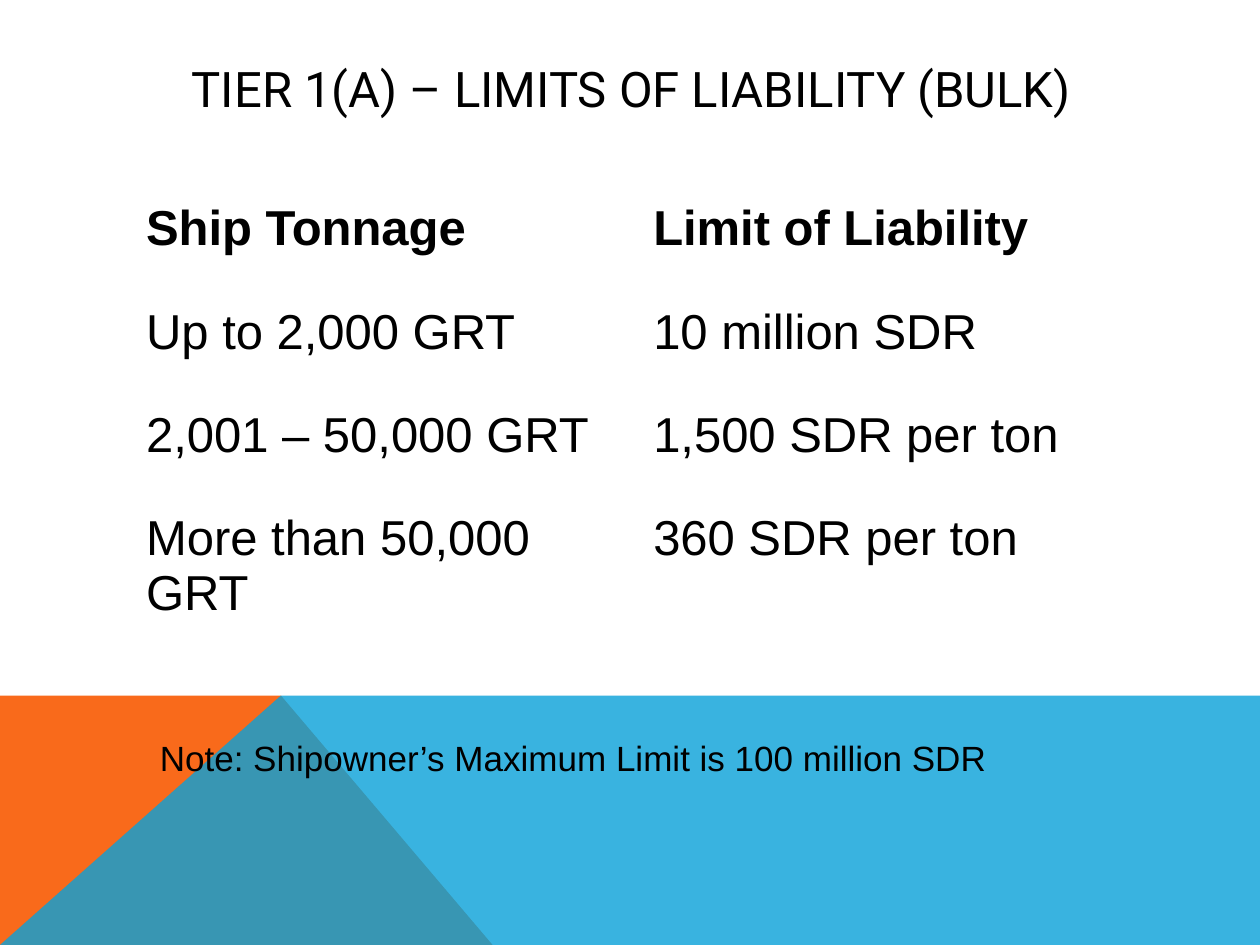
from dataclasses import dataclass

from lxml.etree import SubElement
from pptx import Presentation
from pptx.dml.color import RGBColor as Color
from pptx.enum.text import MSO_ANCHOR as Anchor, PP_ALIGN as Align
from pptx.oxml.ns import qn
from pptx.util import Inches, Pt


@dataclass(frozen=True)
class Theme:
    ink: Color = Color(0, 0, 0)
    orange: Color = Color(0xF9, 0x6A, 0x1B)
    blue: Color = Color(0x08, 0xA1, 0xD9)
    blue_opacity: int = 80
    title_font: str = "Roboto"
    body_font: str = "Arial"
    large: int = 28
    small: int = 20


THEME = Theme()
WIDTH, HEIGHT = 10, 7.5
BAND_TOP = 5.52
PEAK = 2.23

TONNAGE_LIMITS = [
    ("Ship Tonnage", "Limit of Liability"),
    ("Up to 2,000 GRT", "10 million SDR"),
    ("2,001 – 50,000 GRT", "1,500 SDR per ton"),
    ("More than 50,000 GRT", "360 SDR per ton"),
]


def add_span(para, text, size, font, bold=False):
    span = para.add_run()
    span.text = text
    span.font.size = Pt(size)
    span.font.name = font
    span.font.bold = bold
    span.font.color.rgb = THEME.ink


def add_polygon(page, points, color, opacity=100):
    start, *rest = [(Inches(x), Inches(y)) for x, y in points]
    builder = page.shapes.build_freeform(*start)
    builder.add_line_segments(rest, close=True)
    shape = builder.convert_to_shape()
    shape.shadow.inherit = False
    shape.line.fill.background()
    shape.fill.solid()
    shape.fill.fore_color.rgb = color
    if opacity < 100:
        rgb = shape.fill._xPr.find(f".//{qn('a:srgbClr')}")
        SubElement(rgb, qn("a:alpha")).set("val", str(opacity * 1000))


def add_label(page, place, text, size, font, align=Align.LEFT, anchor=Anchor.TOP):
    box = page.shapes.add_textbox(*map(Inches, place))
    frame = box.text_frame
    frame.word_wrap = True
    frame.vertical_anchor = anchor
    para = frame.paragraphs[0]
    para.alignment = align
    add_span(para, text, size, font)


def add_limits_table(page, place, rows, row_heights):
    frame = page.shapes.add_table(len(rows), len(rows[0]), *map(Inches, place))
    table = frame.table
    table.first_row = table.horz_banding = False
    for row, height in zip(table.rows, row_heights):
        row.height = Inches(height)
    for r, texts in enumerate(rows):
        for c, text in enumerate(texts):
            cell = table.cell(r, c)
            cell.fill.background()
            add_span(cell.text_frame.paragraphs[0], text,
                     THEME.large, THEME.body_font, bold=r == 0)


def main():
    deck = Presentation()
    deck.slide_width, deck.slide_height = Inches(WIDTH), Inches(HEIGHT)
    page = deck.slides.add_slide(deck.slide_layouts[6])

    # Bottom band: orange behind, translucent blue in front
    corner, peak = (0, HEIGHT), (PEAK, BAND_TOP)
    add_polygon(page, [corner, (0, BAND_TOP), peak, (3.91, HEIGHT)], THEME.orange)
    add_polygon(page, [corner, peak, (WIDTH, BAND_TOP), (WIDTH, HEIGHT)],
                THEME.blue, THEME.blue_opacity)

    # Title
    add_label(page, (0.9, 0.4, 8.22, 0.6), "TIER 1(A) – LIMITS OF LIABILITY (BULK)",
              THEME.large, THEME.title_font, Align.CENTER, Anchor.MIDDLE)

    # Limits by tonnage
    add_limits_table(page, (1.06, 1.55, 8.05, 3.48), TONNAGE_LIMITS,
                     [0.82] * 3 + [1.03])

    # Note
    add_label(page, (1.17, 5.8, 7.14, 0.44),
              "Note: Shipowner’s Maximum Limit is 100 million SDR",
              THEME.small, THEME.body_font)

    deck.save("out.pptx")


if __name__ == "__main__":
    main()
